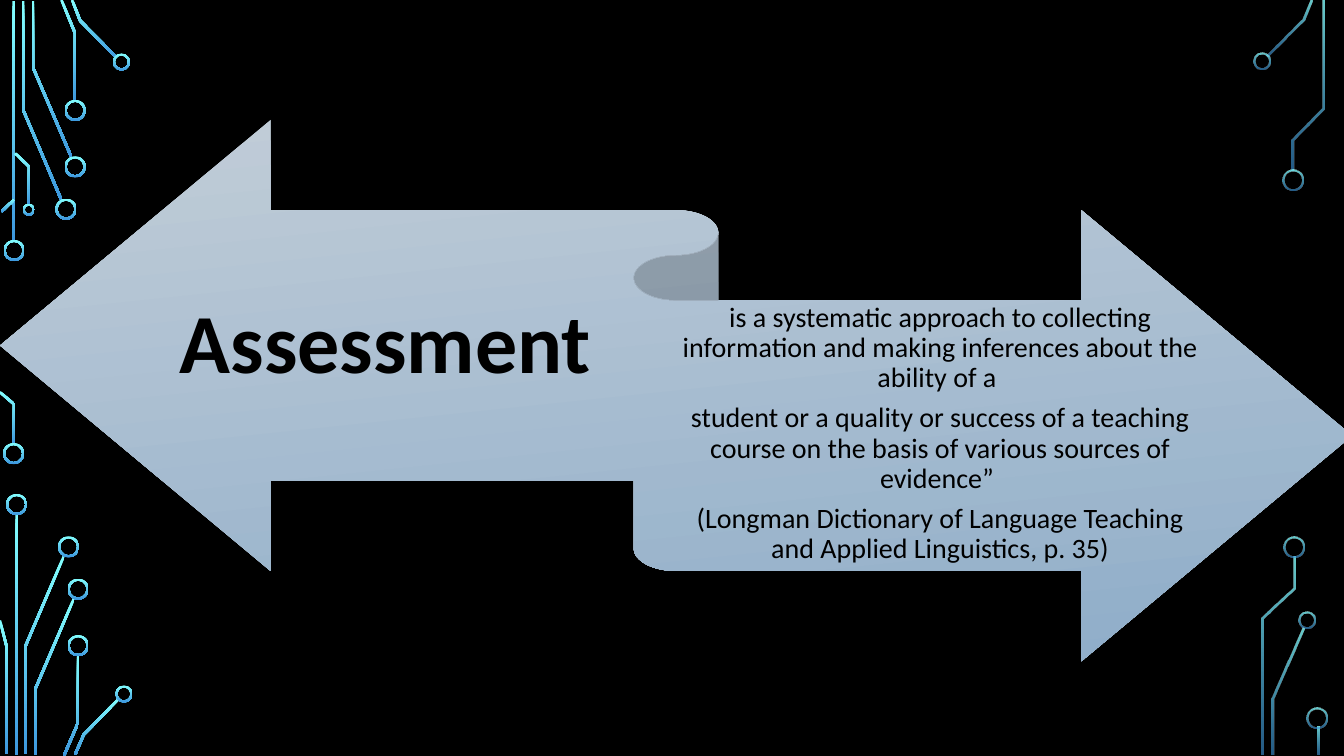
"""Build a slide that defines assessment on a two-way ribbon framed by circuit traces."""
import pptx
import pptx.dml.color
import pptx.enum.shapes
import pptx.enum.text
import pptx.oxml.ns
import pptx.util

COLUMNS, ROWS = 1333, 750
CELL = pptx.util.Inches(0.01)
TRACE_WIDTH = 2.5
RING_WIDTH = 2

BLACK = pptx.dml.color.RGBColor(0x00, 0x00, 0x00)
CYAN = pptx.dml.color.RGBColor(0x82, 0xFF, 0xFF)
BLUE = pptx.dml.color.RGBColor(0x3D, 0x97, 0xDE)
PALE = pptx.dml.color.RGBColor(0xD7, 0xE4, 0xF0)
STEEL = pptx.dml.color.RGBColor(0x9E, 0xC0, 0xDF)


def paint(shape, colours, opacities, angle=270):
    """Fill a shape with a two-stop gradient and remove its outline and shadow."""
    shape.shadow.inherit = False
    shape.line.fill.background()
    shape.fill.gradient()
    shape.fill.gradient_angle = angle
    for stop, colour in zip(shape.fill.gradient_stops, colours):
        stop.color.rgb = colour
    tints = shape.element.iter(pptx.oxml.ns.qn("a:srgbClr"))
    for tint, opacity in zip(list(tints), opacities):
        if opacity < 100:
            alpha = tint.makeelement(pptx.oxml.ns.qn("a:alpha"), {"val": str(opacity * 1000)})
            tint.append(alpha)


def outline(centres):
    """Return the corners of a band of even width around a line of points."""
    points = [complex(x, y) for x, y in centres]
    normals = [1j * (end - start) / abs(end - start) for start, end in zip(points, points[1:])]
    shifts = []
    for before, after in zip(normals[:1] + normals, normals + normals[-1:]):
        overlap = (before * after.conjugate()).real
        shifts.append((before + after) * TRACE_WIDTH / 2 / (1 + overlap))
    one_side = [point + shift for point, shift in zip(points, shifts)]
    other_side = [point - shift for point, shift in zip(points, shifts)]
    return [(corner.real * CELL, corner.imag * CELL) for corner in one_side + other_side[::-1]]


deck = pptx.Presentation()
deck.slide_width, deck.slide_height = COLUMNS * CELL, ROWS * CELL
page = deck.slides.add_slide(deck.slide_layouts[6])
page.background.fill.solid()
page.background.fill.fore_color.rgb = BLACK

circuits = [
    {
        "opacities": (100, 100),
        "traces": [
            [(13.5, 1), (13.5, 240)],
            [(23, 1), (23, 109), (61, 198.5)],
            [(32.5, 1), (32.5, 66.5), (71, 156.5)],
            [(61, 0), (74.5, 33), (74.5, 100)],
            [(71.5, 0), (79.5, 20.5), (115.5, 57)],
            [(1.5, 210), (14, 198)],
            [(0, 389), (14, 401), (14, 441)],
            [(15, 152), (29, 165.5), (29, 203)],
            [(16.5, 510), (16.5, 749)],
            [(63.5, 551.5), (25.5, 640.5), (25.5, 748)],
            [(0, 615.5), (6.5, 641), (6.5, 748)],
            [(73.5, 593.5), (35.5, 682.5), (35.5, 749)],
            [(77.5, 650), (77.5, 717), (63.5, 749.5)],
            [(118, 693), (83, 729), (74.5, 748.5)],
        ],
        "rings": [
            (14, 248.5, 21), (13.5, 450, 21), (65.5, 207.5, 21), (74.5, 165.5, 21),
            (74.5, 109.5, 21), (120.5, 61.5, 17), (28.5, 208, 12), (16.5, 500.5, 21),
            (68, 542.5, 21), (77.5, 584.5, 21), (77.5, 640.5, 21), (123, 688.5, 17),
        ],
    },
    {
        "opacities": (80, 60),
        "traces": [
            [(1300.5, 0), (1292.5, 19.5), (1257, 55.5)],
            [(1312.5, 1), (1312.5, 107.5), (1282, 138.5), (1282, 169)],
            [(1293, 623.5), (1262.5, 693.5), (1262.5, 749)],
            [(1283.5, 552), (1283.5, 583.5), (1252.5, 613.5), (1252.5, 749)],
            [(1307.5, 721), (1307.5, 749)],
        ],
        "rings": [
            (1251.5, 60.5, 17), (1282.5, 178.5, 21), (1296.5, 615.5, 17),
            (1283, 542.5, 21), (1306.5, 712, 21),
        ],
    },
]

for circuit in circuits:
    for centres in circuit["traces"]:
        corners = outline(centres)
        builder = page.shapes.build_freeform(*corners[0])
        builder.add_line_segments(corners[1:], close=True)
        paint(builder.convert_to_shape(), (CYAN, BLUE), circuit["opacities"])
    for centre_x, centre_y, size in circuit["rings"]:
        left, top = int((centre_x - size / 2) * CELL), int((centre_y - size / 2) * CELL)
        ring = page.shapes.add_shape(
            pptx.enum.shapes.MSO_SHAPE.DONUT, left, top, size * CELL, size * CELL)
        ring.adjustments[0] = RING_WIDTH / size
        paint(ring, (CYAN, BLUE), circuit["opacities"])

ribbon = page.shapes.add_shape(
    pptx.enum.shapes.MSO_SHAPE.LEFT_RIGHT_RIBBON, 0, 119 * CELL, 1341 * CELL, 537 * CELL)
paint(ribbon, (PALE, STEEL), (90, 90), angle=276)

labels = [
    {
        "place": (161, 213, 443, 263), "insets": (23, 25), "size": 60, "bold": True,
        "lines": ["Assessment"],
    },
    {
        "place": (671, 299, 523, 263), "insets": (8, 8), "size": 20, "bold": False,
        "lines": [
            "is a systematic approach to collecting information and making inferences "
            "about the ability of a ",
            "student or a quality or success of a teaching course on the basis of "
            "various sources of evidence” ",
            "(Longman Dictionary of Language Teaching and Applied Linguistics, p. 35)",
        ],
    },
]

for label in labels:
    box = page.shapes.add_textbox(*[cells * CELL for cells in label["place"]])
    frame_format = {
        "word_wrap": True,
        "vertical_anchor": pptx.enum.text.MSO_ANCHOR.MIDDLE,
        "margin_left": 0,
        "margin_right": 0,
        "margin_top": label["insets"][0] * CELL,
        "margin_bottom": label["insets"][1] * CELL,
    }
    para_format = {
        "alignment": pptx.enum.text.PP_ALIGN.CENTER,
        "line_spacing": 0.9,
        "space_after": pptx.util.Pt(label["size"] * 0.35),
    }
    font_format = {"name": "Calibri", "size": pptx.util.Pt(label["size"]), "bold": label["bold"]}
    for name, value in frame_format.items():
        setattr(box.text_frame, name, value)
    for index, line in enumerate(label["lines"]):
        para = box.text_frame.add_paragraph() if index else box.text_frame.paragraphs[0]
        for name, value in para_format.items():
            setattr(para, name, value)
        span = para.add_run()
        span.text = line
        span.font.color.rgb = BLACK
        for name, value in font_format.items():
            setattr(span.font, name, value)

deck.save("out.pptx")
